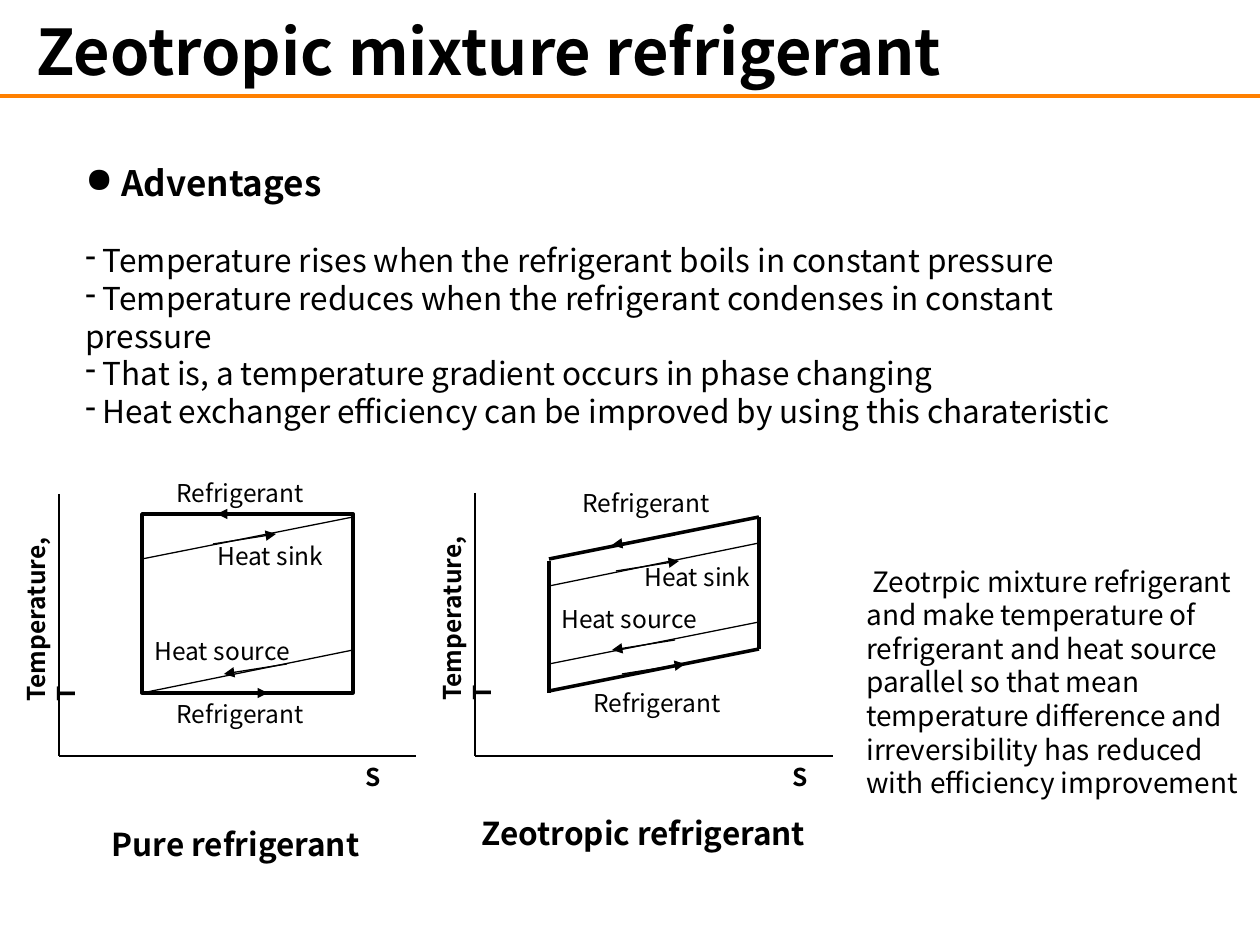
from lxml import etree
from pptx import Presentation
from pptx.dml.color import RGBColor
from pptx.enum.shapes import MSO_CONNECTOR as Connector
from pptx.enum.text import MSO_ANCHOR as Anchor, MSO_AUTO_SIZE as AutoSize, PP_ALIGN as Align
from pptx.oxml.ns import qn
from pptx.util import Emu, Pt

PX = 914400 / 126
FONT = "Noto Sans CJK KR"
BLACK = RGBColor(0, 0, 0)
ORANGE = RGBColor(255, 128, 0)

presentation = Presentation()
presentation.slide_width = Emu(round(1260 * PX))
presentation.slide_height = Emu(round(945 * PX))
slide = presentation.slides.add_slide(presentation.slide_layouts[5])


def add_line(points, width=0.75, color=BLACK, arrow=False):
    line = slide.shapes.add_connector(Connector.STRAIGHT, *[Emu(round(v * PX)) for v in points])
    line.line.color.rgb = color
    line.line.width = Pt(width)
    properties = line.line._get_or_add_ln()
    if arrow:
        etree.SubElement(properties, qn("a:tailEnd"), type="triangle")
    etree.SubElement(line._element.spPr, qn("a:effectLst"))


def add_text(box, text, size, bold=False, align=Align.LEFT):
    shape = slide.shapes.add_textbox(*[Emu(round(v * PX)) for v in box])
    frame = shape.text_frame
    frame.word_wrap = True
    frame.auto_size = AutoSize.SHAPE_TO_FIT_TEXT
    frame.text = text
    for paragraph in frame.paragraphs:
        paragraph.alignment = align
        for run in paragraph.runs:
            run.font.name = FONT
            run.font.size = Pt(size)
            run.font.bold = bold
            run.font.color.rgb = BLACK
            etree.SubElement(run.font._element, qn("a:ea"), typeface=FONT)
    return shape


add_line((0, 96, 1260, 96), 2, ORANGE)

title = slide.shapes.title
title.left, title.top, title.width, title.height = [Emu(round(v * PX)) for v in (0, 0, 978, 100)]
title.text_frame.text = "Zeotropic mixture refrigerant"
title.text_frame.vertical_anchor = Anchor.MIDDLE
title.text_frame.auto_size = AutoSize.NONE
heading = title.text_frame.paragraphs[0]
heading.alignment = Align.CENTER
heading_font = heading.runs[0].font
heading_font.name = FONT
heading_font.size = Pt(36)
heading_font.bold = True
heading_font.color.rgb = BLACK
etree.SubElement(heading_font._element, qn("a:ea"), typeface=FONT)

advantages = [
    " Adventages",
    " Temperature rises when the refrigerant boils in constant pressure",
    " Temperature reduces when the refrigerant condenses in constant pressure",
    " That is, a temperature gradient occurs in phase changing",
    " Heat exchanger efficiency can be improved by using this charateristic",
]
body = add_text((73, 155, 1092, 285), "\n".join(advantages), 18)
for index, paragraph in enumerate(body.text_frame.paragraphs):
    bullet = "-" if index else "●"
    etree.SubElement(paragraph._p.get_or_add_pPr(), qn("a:buChar"), char=bullet)
first, second = body.text_frame.paragraphs[:2]
first.runs[0].font.size = Pt(20)
first.runs[0].font.bold = True
second.space_before = Pt(21.6)

cycle = slide.shapes.add_shape(1, *[Emu(round(v * PX)) for v in (142, 514, 211, 179)])
cycle.shadow.inherit = False
cycle.fill.background()
cycle.line.color.rgb = BLACK
cycle.line.width = Pt(2)

thin_lines = [
    (59, 494, 59, 756), (59, 756, 416, 756),
    (142, 559, 353, 517), (142, 693, 353, 650),
    (475, 493, 475, 756), (475, 756, 833, 756),
    (549, 586, 759, 543), (549, 664, 759, 622),
]
thick_lines = [
    (549, 559, 759, 517), (549, 691, 759, 649),
    (549, 693, 549, 561), (759, 649, 759, 517),
]
arrows = [
    (217, 693, 268, 693), (268, 514, 217, 514),
    (213, 544, 276, 534), (287, 664, 224, 674),
    (616, 571, 679, 561), (675, 535, 612, 545),
    (622, 674, 685, 664), (675, 640, 612, 650),
]
for points in thin_lines:
    add_line(points)
for points in thick_lines:
    add_line(points, 2)
for points in arrows:
    add_line(points, arrow=True)

for left, top in [(15, 525), (431, 524)]:
    axis_label = add_text((left, top, 54, 189), "Temperature,T", 14, True)
    axis_label.rotation = 180
    axis_label.text_frame._txBody.bodyPr.set("vert", "eaVert")

for left in (353, 780):
    add_text((left, 756, 53, 42), "S", 14, True)

labels = [
    ("Refrigerant", 157, [(164, 472), (164, 693), (570, 482), (581, 682)]),
    ("Heat sink", 147, [(205, 535), (632, 556)]),
    ("Heat source", 179, [(142, 630), (549, 598)]),
]
for text, width, places in labels:
    for left, top in places:
        add_text((left, top, width, 42), text, 14)

add_text((59, 819, 346, 50), " Pure refrigerant", 18, True, Align.CENTER)
add_text((423, 808, 441, 50), "Zeotropic refrigerant", 18, True, Align.CENTER)
add_text(
    (854, 558, 406, 251),
    " Zeotrpic mixture refrigerant and make temperature of refrigerant and heat source "
    "parallel so that mean temperature difference and irreversibility has reduced "
    "with efficiency improvement",
    16,
)

presentation.save("out.pptx")
